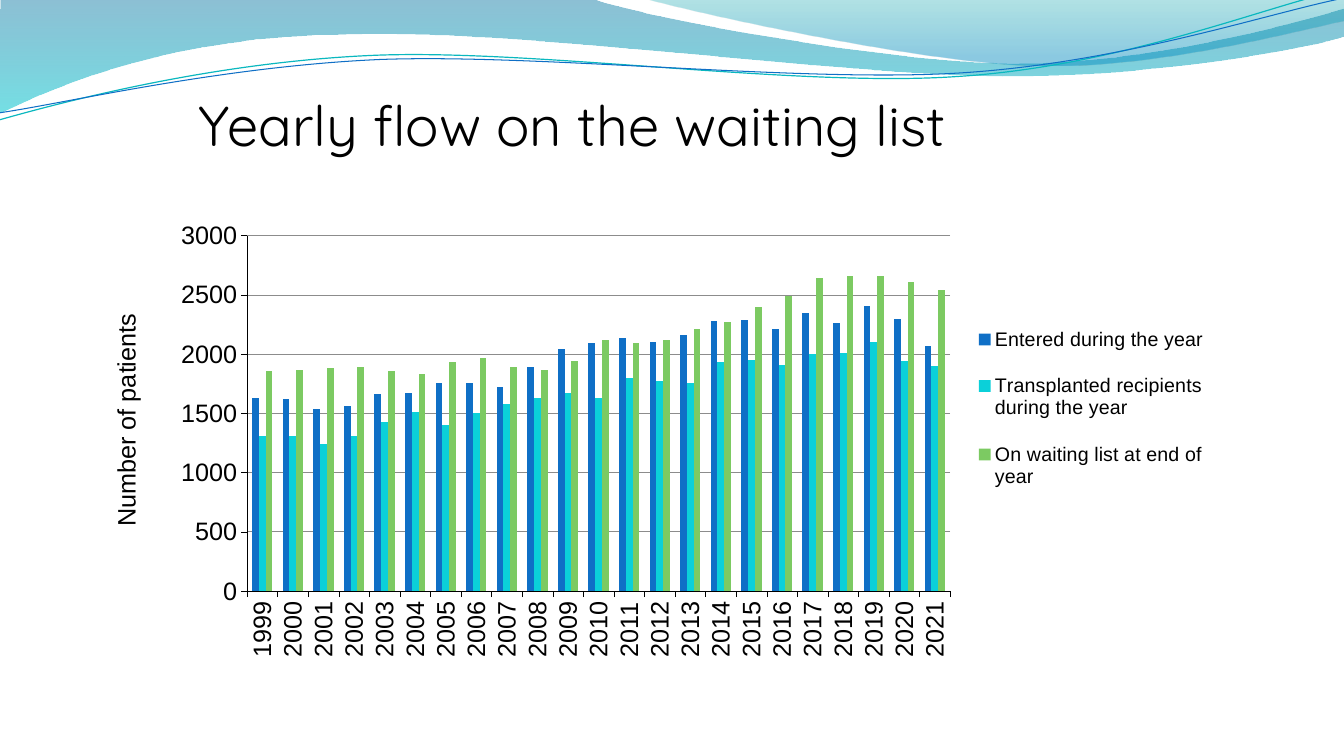
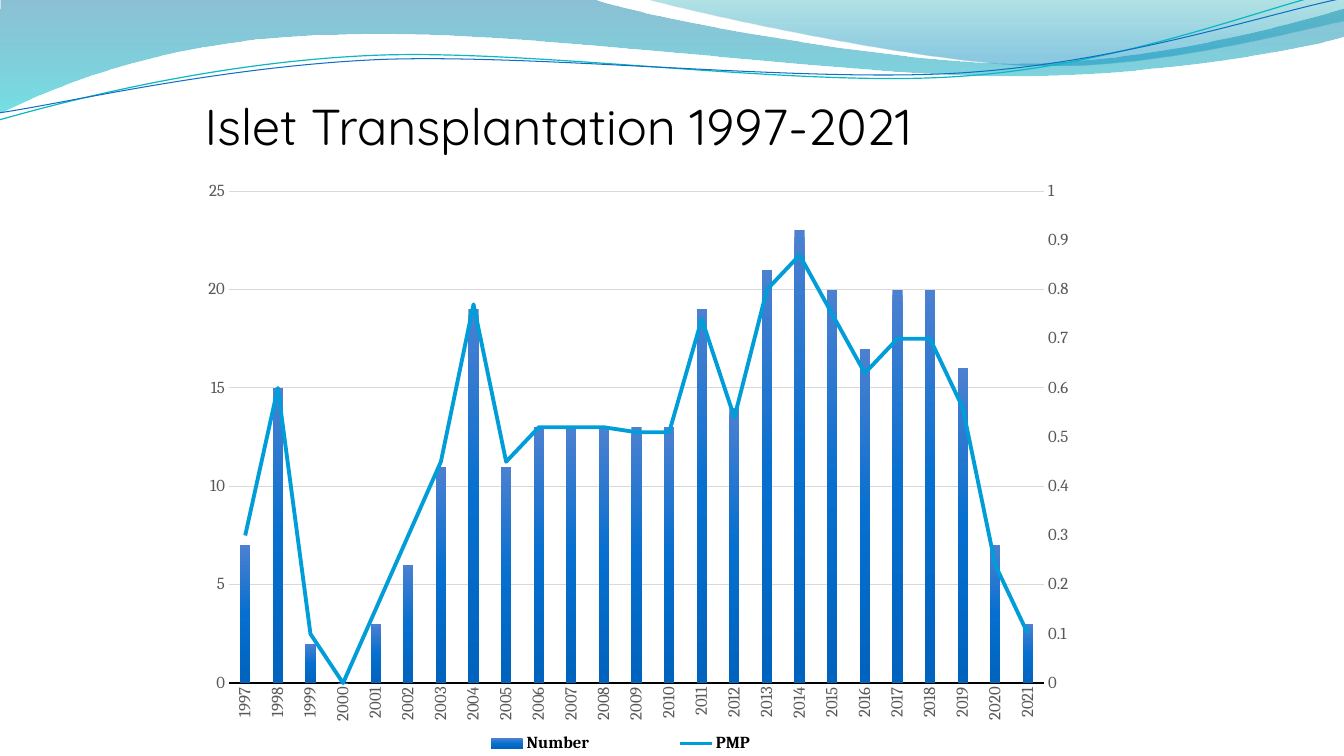
"""Build two slides of transplantation charts under a shared wave banner."""
import pptx
import pptx.chart.axis
import pptx.chart.data
import pptx.dml.color
import pptx.enum.chart
import pptx.enum.text
import pptx.oxml
import pptx.oxml.ns
import pptx.util

Pt = pptx.util.Pt
RGBColor = pptx.dml.color.RGBColor
TICK = pptx.enum.chart.XL_TICK_MARK
LEGEND = pptx.enum.chart.XL_LEGEND_POSITION
ANCHOR = pptx.enum.text.MSO_ANCHOR
ALIGN = pptx.enum.text.PP_ALIGN
AUTO_SIZE = pptx.enum.text.MSO_AUTO_SIZE

BLACK = RGBColor(0x00, 0x00, 0x00)
WHITE = RGBColor(0xFF, 0xFF, 0xFF)
BLUE = RGBColor(0x0F, 0x6F, 0xC6)
CYAN = RGBColor(0x0B, 0xD0, 0xD9)
GREEN = RGBColor(0x7C, 0xCA, 0x62)
TEAL = RGBColor(0x0A, 0xB8, 0xBF)
SKY = RGBColor(0x00, 0x9D, 0xD9)
LABEL_GREY = RGBColor(0x59, 0x59, 0x59)
GRID_DARK = RGBColor(0x8C, 0x8C, 0x8C)
GRID_LIGHT = RGBColor(0xD9, 0xD9, 0xD9)
DEEP_BLUE = RGBColor(0x00, 0x74, 0xA1)
AQUA = RGBColor(0x00, 0xC6, 0xCF)
DARK_TEAL = RGBColor(0x00, 0xA1, 0xA9)
MID_BLUE = RGBColor(0x00, 0x8B, 0xBF)
BAR_STOPS = [(0, RGBColor(0x4C, 0x80, 0xD0), 100),
             (50, RGBColor(0x06, 0x6F, 0xCF), 100),
             (100, RGBColor(0x00, 0x63, 0xBD), 100)]

WIDE_WAVE = [
    [(0, 0)], [(422.6, -0.7)],
    [(456.5, 12.2), (636.5, 45.4), (727.9, 45.4)],
    [(818.6, 45.4), (919.4, 18.7), (960, 6.5)], [(960.5, 26.4)],
    [(944, 32), (834.5, 55), (715.7, 54.5)],
    [(596.9, 54), (366.5, 20.7), (247, 25)],
    [(123.8, 25.9), (43.9, 59.8), (-1.4, 81.4)]]
RIGHT_WAVE = [
    [(459.4, -0.7)],
    [(488.9, 7.9), (654.5, 44.6), (738, 46.8)],
    [(820.8, 49.7), (923, 23), (960, 15.1)], [(960, 0)]]
TEAL_CURVE = [
    [(-0.7, 85.7)],
    [(45.4, 72.7), (151.2, 44.6), (265.7, 39.6)],
    [(379.4, 34.6), (568.1, 62.6), (683.3, 54.7)],
    [(799.2, 47.5), (900.7, 5.8), (957.6, -7.2)]]
BLUE_CURVE = [
    [(-0.7, 80.6)],
    [(44.6, 74.2), (157, 47.5), (271.4, 42.5)],
    [(386.6, 38.2), (573.1, 59.4), (687.6, 52)],
    [(802.1, 44.6), (903.6, 10.1), (959.8, -1.4)]]

FLOW = [
    ("Entered during the year", BLUE,
     [1630, 1620, 1540, 1560, 1660, 1670, 1760, 1760, 1720, 1890, 2040, 2090,
      2140, 2100, 2160, 2280, 2290, 2210, 2350, 2260, 2410, 2300, 2070]),
    ("Transplanted recipients during the year", CYAN,
     [1310, 1310, 1240, 1310, 1430, 1510, 1400, 1500, 1580, 1630, 1670, 1630,
      1800, 1770, 1760, 1930, 1950, 1910, 2000, 2010, 2100, 1940, 1900]),
    ("On waiting list at end of year", GREEN,
     [1860, 1870, 1880, 1890, 1860, 1830, 1930, 1970, 1890, 1870, 1940, 2120,
      2090, 2120, 2210, 2270, 2400, 2490, 2640, 2660, 2660, 2610, 2540])]
ISLETS = [
    ("Number", BLUE,
     [7, 15, 2, 0, 3, 6, 11, 19, 11, 13, 13, 13, 13, 13, 19, 14, 21, 23, 20,
      17, 20, 20, 16, 7, 3]),
    ("PMP", SKY,
     [0.3, 0.6, 0.1, 0, 0.15, 0.3, 0.45, 0.77, 0.45, 0.52, 0.52, 0.52, 0.51,
      0.51, 0.74, 0.54, 0.8, 0.87, 0.75, 0.63, 0.7, 0.7, 0.56, 0.24, 0.1])]


def apply_format(target, values):
    """Set every named attribute on the target."""
    for name, value in values.items():
        setattr(target, name, value)


def style_font(font, color, **values):
    """Colour a font and set its other attributes."""
    apply_format(font, values)
    font.color.rgb = color


def style_line(line, color, width=None):
    """Draw a line in a colour, or hide it when there is none."""
    if color is None:
        line.fill.background()
        return
    line.color.rgb = color
    line.width = Pt(width)


def xml(tag, body=""):
    """Parse one element with the drawing and chart namespaces."""
    spaces = pptx.oxml.ns.nsdecls("a", "c")
    name = tag.split()[0]
    return pptx.oxml.parse_xml(f"<{tag} {spaces}>{body}</{name}>")


def gradient_fill(fill, properties, stops):
    """Fill downwards through stops of position, colour and opacity."""
    fill.background()
    stop_xml = "".join(
        f'<a:gs pos="{position * 1000}"><a:srgbClr val="{color}">'
        f'<a:alpha val="{opacity * 1000}"/></a:srgbClr></a:gs>'
        for position, color, opacity in stops)
    gradient = xml('a:gradFill rotWithShape="1"',
                   f'<a:gsLst>{stop_xml}</a:gsLst><a:lin ang="5400000" scaled="0"/>')
    properties.replace(properties.find(pptx.oxml.ns.qn("a:noFill")), gradient)


def bend(wave, segments):
    """Join each run of three outline steps into one cubic curve."""
    steps = iter(wave.element.xpath(".//a:lnTo"))
    for segment in segments[1:]:
        group = [next(steps) for _ in segment]
        if len(group) == 3:
            curve = xml("a:cubicBezTo")
            group[0].addprevious(curve)
            for step in group:
                curve.append(step[0])
                step.getparent().remove(step)


def add_wave(shapes, segments, stops=None, color=None, width=None):
    """Draw a gradient wave or an open curve and return it."""
    points = [(Pt(x), Pt(y)) for segment in segments for x, y in segment]
    builder = shapes.build_freeform(*points[0], scale=1.0)
    builder.add_line_segments(points[1:], close=bool(stops))
    wave = builder.convert_to_shape()
    bend(wave, segments)
    wave.shadow.inherit = False
    if stops:
        gradient_fill(wave.fill, wave.element.spPr, stops)
    else:
        wave.fill.background()
    style_line(wave.line, color, width)
    return wave


def add_banner(layout, slide):
    """Draw the waves and place them on the layout behind everything."""
    shapes = slide.shapes
    waves = [
        add_wave(shapes, WIDE_WAVE, [(0, DEEP_BLUE, 45), (100, AQUA, 55)]),
        add_wave(shapes, RIGHT_WAVE, [(0, DARK_TEAL, 30), (80, MID_BLUE, 45)]),
        add_wave(shapes, TEAL_CURVE, color=TEAL, width=0.85),
        add_wave(shapes, BLUE_CURVE, color=BLUE, width=0.75)]
    for position, wave in enumerate(waves, start=2):
        layout.shapes.element.insert(position, wave.element)


def set_title(slide, text, box, size):
    """Move and format the title placeholder and return it."""
    title = slide.shapes.title
    apply_format(title, dict(zip(("left", "top", "width", "height"), map(Pt, box))))
    frame = title.text_frame
    frame.text = text
    apply_format(frame, {"word_wrap": True, "auto_size": AUTO_SIZE.NONE,
                         "vertical_anchor": ANCHOR.TOP})
    heading = frame.paragraphs[0]
    apply_format(heading, {"alignment": ALIGN.LEFT, "line_spacing": 0.8})
    style_font(heading.font, BLACK, name="Quicksand", size=Pt(size))
    return title


def set_layout(parent, index, box, inner=False):
    """Give a chart part a fixed place as fractions of the chart."""
    for old in parent.findall(pptx.oxml.ns.qn("c:layout")):
        parent.remove(old)
    parts = [("layoutTarget", "inner")] if inner else []
    parts += [("xMode", "edge"), ("yMode", "edge")] + list(zip("xywh", box))
    body = "".join(f'<c:{name} val="{value}"/>' for name, value in parts)
    parent.insert(index, xml("c:layout", f"<c:manualLayout>{body}</c:manualLayout>"))


def style_axis(axis, font, color, line=None, width=None, tick=TICK.NONE):
    """Format the labels, line and ticks of an axis."""
    style_font(axis.tick_labels.font, color, **font)
    apply_format(axis, {"major_tick_mark": tick, "minor_tick_mark": TICK.NONE})
    style_line(axis.format.line, line, width)


def set_scale(axis, top, step):
    """Scale a value axis from zero."""
    apply_format(axis, {"minimum_scale": 0, "maximum_scale": top, "major_unit": step})


def add_columns(slide, box, years, rows, font, gap, plot_box):
    """Add a clustered column chart."""
    data = pptx.chart.data.CategoryChartData()
    data.categories = [str(year) for year in years]
    for name, _, values in rows:
        data.add_series(name, values)
    kind = pptx.enum.chart.XL_CHART_TYPE.COLUMN_CLUSTERED
    chart = slide.shapes.add_chart(kind, *map(Pt, box), data).chart
    chart.has_title = False
    style_font(chart.font, BLACK, **font)
    columns = chart.plots[0]
    apply_format(columns, {"gap_width": gap, "overlap": 0, "vary_by_categories": False})
    for series, (_, color, _) in zip(columns.series, rows):
        series.format.fill.solid()
        series.format.fill.fore_color.rgb = color
    set_layout(chart.element.xpath("c:chart/c:plotArea")[0], 0, plot_box, inner=True)
    return chart


def turn_years(chart):
    """Turn the category labels upright."""
    for body in chart.element.xpath(".//c:catAx/c:txPr/a:bodyPr"):
        for name, value in {"rot": "-5400000", "vert": "horz"}.items():
            body.set(name, value)


def add_legend(chart, position, box, font):
    """Show the legend in a fixed place."""
    chart.has_legend = True
    apply_format(chart.legend, {"position": position, "include_in_layout": False})
    style_font(chart.legend.font, BLACK, **font)
    set_layout(chart.element.xpath("c:chart/c:legend")[0], 1, box)


def style_grid(axis, color, width):
    """Show the major gridlines of an axis."""
    axis.has_major_gridlines = True
    style_line(axis.major_gridlines.format.line, color, width)


def move_to_right_axis(chart):
    """Turn the second series into a line on a right axis; return that axis."""
    bars = chart.element.xpath(".//c:barChart")[0]
    series = bars.xpath("c:ser")[1]
    for unwanted in series.xpath("c:invertIfNegative"):
        series.remove(unwanted)
    series.xpath("c:spPr")[0].addnext(xml("c:marker", '<c:symbol val="none"/>'))
    series.append(xml('c:smooth val="0"'))
    line = xml("c:lineChart", '<c:grouping val="standard"/><c:varyColors val="0"/>'
               '<c:marker val="1"/><c:axId val="5001"/><c:axId val="5002"/>')
    line.insert(2, series)
    bars.addnext(line)
    right = xml("c:valAx", '<c:axId val="5002"/><c:scaling/><c:delete val="0"/>'
                '<c:axPos val="r"/><c:numFmt formatCode="General" sourceLinked="0"/>'
                '<c:tickLblPos val="nextTo"/><c:crossAx val="5001"/><c:crosses val="max"/>')
    hidden = xml("c:catAx", '<c:axId val="5001"/><c:scaling/><c:delete val="1"/>'
                 '<c:axPos val="b"/><c:crossAx val="5002"/><c:crosses val="autoZero"/>')
    left = chart.element.xpath(".//c:valAx")[0]
    left.addnext(right)
    right.addnext(hidden)
    return pptx.chart.axis.ValueAxis(right)


def fill_flow_slide(slide):
    """Show the yearly flow on the waiting list."""
    set_title(slide, "Yearly flow on the waiting list", (134.6, 70.6, 606, 63.4), 40)
    font = {"name": "Arial", "size": Pt(18), "bold": False}
    chart = add_columns(slide, (75, 141.2, 805, 362.2), range(1999, 2022), FLOW, font,
                        150, (0.126, 0.075, 0.624, 0.701))
    for axis in (chart.category_axis, chart.value_axis):
        style_axis(axis, font, BLACK, BLACK, 0.25, TICK.OUTSIDE)
    patients = chart.value_axis
    set_scale(patients, 3000, 500)
    style_grid(patients, GRID_DARK, 0.5)
    caption = patients.axis_title.text_frame
    caption.text = "Number of patients"
    style_font(caption.paragraphs[0].font, BLACK, **font)
    set_layout(chart.element.xpath(".//c:valAx/c:title")[0], 1, (0, 0.22))
    turn_years(chart)
    add_legend(chart, LEGEND.RIGHT, (0.76, 0.21, 0.23, 0.41), {**font, "size": Pt(14)})


def fill_islet_slide(slide):
    """Show islet transplantations as counts and per million people."""
    title = set_title(slide, "Islet Transplantation 1997-2021", (139, 72.4, 570, 67), 36)
    title.fill.solid()
    title.fill.fore_color.rgb = WHITE
    font = {"name": "Cambria", "size": Pt(12), "bold": False}
    chart = add_columns(slide, (136, 121.2, 640, 427), range(1997, 2022), ISLETS,
                        {**font, "size": Pt(10)}, 219, (0.043, 0.036, 0.91, 0.823))
    number, per_million = chart.plots[0].series
    count_axis = chart.value_axis
    bar_properties = chart.element.xpath(".//c:ser/c:spPr")[0]
    gradient_fill(number.format.fill, bar_properties, BAR_STOPS)
    per_million.format.fill.background()
    style_line(per_million.format.line, SKY, 2.75)
    style_axis(chart.category_axis, font, LABEL_GREY, BLACK, 1)
    turn_years(chart)
    million_axis = move_to_right_axis(chart)
    for axis, top, step in ((count_axis, 25, 5), (million_axis, 1, 0.1)):
        style_axis(axis, font, LABEL_GREY)
        set_scale(axis, top, step)
    style_grid(count_axis, GRID_LIGHT, 0.75)
    add_legend(chart, LEGEND.BOTTOM, (0.24, 0.93, 0.48, 0.06), {**font, "bold": True})


def main():
    """Build and save the presentation."""
    deck = pptx.Presentation()
    apply_format(deck, {"slide_width": Pt(960), "slide_height": Pt(540)})
    layout = deck.slide_layouts.get_by_name("Title Only")
    flow, islets = (deck.slides.add_slide(layout) for _ in range(2))
    add_banner(layout, flow)
    fill_flow_slide(flow)
    fill_islet_slide(islets)
    deck.save("out.pptx")


if __name__ == "__main__":
    main()
